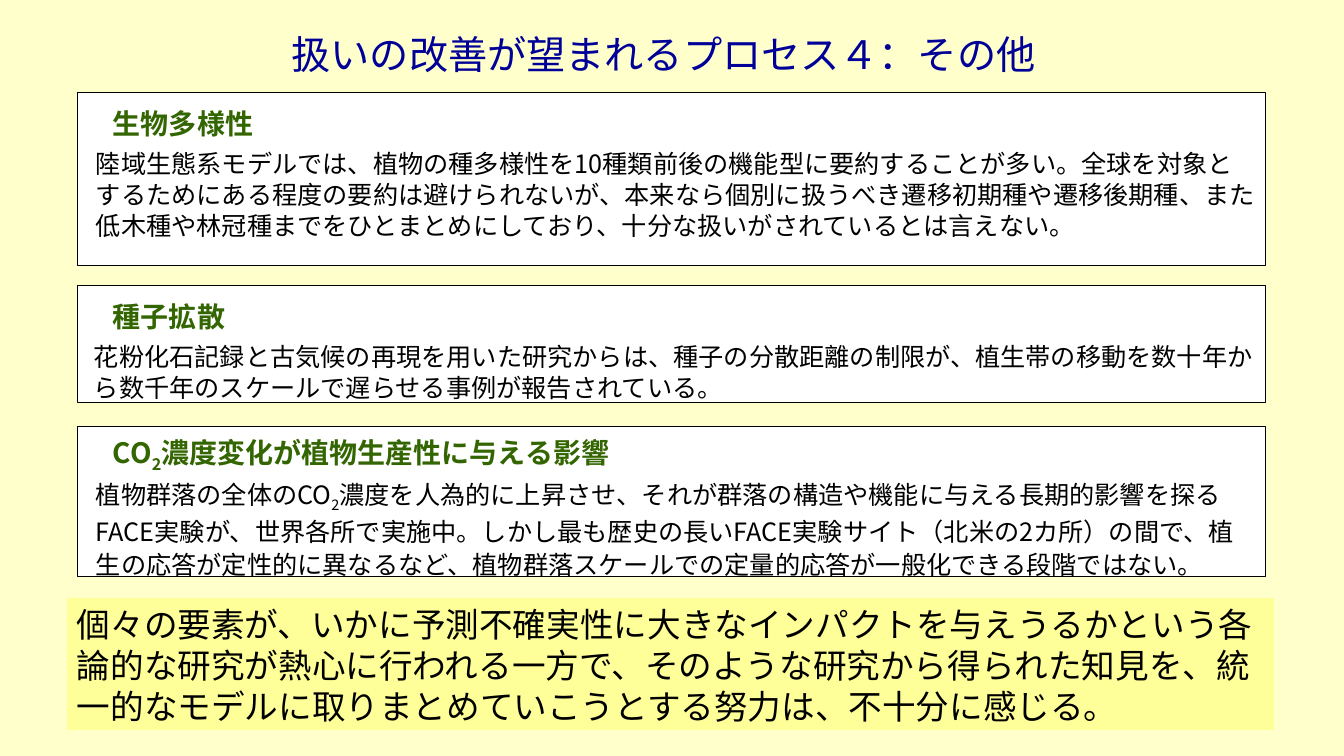
"""Build the slide on processes whose treatment should be improved."""
from dataclasses import dataclass

from lxml.etree import SubElement
from pptx import Presentation
from pptx.dml.color import RGBColor
from pptx.enum.shapes import MSO_SHAPE
from pptx.enum.text import MSO_ANCHOR, PP_ALIGN
from pptx.oxml.ns import qn
from pptx.util import Emu, Pt

TITLE = "扱いの改善が望まれるプロセス４：その他"
SECTIONS = [
    {
        "panel": (93, 173),
        "heading": ["生物多様性"],
        "body": ["陸域生態系モデルでは、植物の種多様性を10種類前後の機能型に要約することが多い。"
                 "全球を対象とするためにある程度の要約は避けられないが、本来なら個別に扱うべき"
                 "遷移初期種や遷移後期種、また低木種や林冠種までをひとまとめにしており、"
                 "十分な扱いがされているとは言えない。"],
        "body_box": (86, 143, 1181, 102),
        "leading": 1.22,
    },
    {
        "panel": (286, 117),
        "heading": ["種子拡散"],
        "body": ["花粉化石記録と古気候の再現を用いた研究からは、種子の分散距離の制限が、"
                 "植生帯の移動を数十年から数千年のスケールで遅らせる事例が報告されている。"],
        "body_box": (84, 336, 1183, 72),
        "leading": 1.22,
    },
    {
        "panel": (427, 150),
        "heading": ["CO", "2", "濃度変化が植物生産性に与える影響"],
        "body": ["植物群落の全体のCO", "2",
                 "濃度を人為的に上昇させ、それが群落の構造や機能に与える長期的影響を探る"
                 "FACE実験が、世界各所で実施中。しかし最も歴史の長いFACE実験サイト"
                 "（北米の2カ所）の間で、植生の応答が定性的に異なるなど、"
                 "植物群落スケールでの定量的応答が一般化できる段階ではない。"],
        "body_box": (86, 476, 1169, 102),
        "leading": 1.3,
    },
]
CONCLUSION = ("個々の要素が、いかに予測不確実性に大きなインパクトを与えうるかという各論的な研究が"
              "熱心に行われる一方で、そのような研究から得られた知見を、統一的なモデルに"
              "取りまとめていこうとする努力は、不十分に感じる。")

SLIDE_SIZE = (1344, 756)
PANEL_LEFT, PANEL_WIDTH = 78, 1188
HEADING_LEFT, HEADING_DROP = 103, 8
HEADING_SIZE = (867, 44)
TITLE_BOX = (210, 14, 907, 79)
CONCLUSION_BOX = (67, 598, 1207, 132)


@dataclass(frozen=True)
class Theme:
    """Colours, font and type sizes of the slide."""
    font: str = "Noto Sans CJK JP"
    background: str = "FFFFCC"
    panel: str = "FFFFFF"
    highlight: str = "FFFF99"
    text: str = "000000"
    title: str = "000099"
    heading: str = "336600"
    title_size: int = 28
    conclusion_size: int = 24
    heading_size: int = 20
    body_size: int = 18


THEME = Theme()


def px(length):
    """Turn pixels into EMU."""
    return Emu(round(length * 914400 / 100.8))


def add_box(slide, box, fill, line=None):
    """Add a plain filled rectangle."""
    shape = slide.shapes.add_shape(MSO_SHAPE.RECTANGLE, *map(px, box))
    shape.shadow.inherit = False
    shape.fill.solid()
    shape.fill.fore_color.rgb = RGBColor.from_string(fill)
    if line:
        shape.line.color.rgb = RGBColor.from_string(line)
        shape.line.width = Pt(0.75)
    else:
        shape.line.fill.background()
    return shape


def add_text(slide, box, runs, *, size, color=THEME.text, bold=False, leading=1.22,
             align=PP_ALIGN.LEFT, anchor=MSO_ANCHOR.TOP):
    """Add one paragraph whose every second run is a subscript."""
    frame = slide.shapes.add_textbox(*map(px, box)).text_frame
    frame.word_wrap = True
    frame.vertical_anchor = anchor
    paragraph = frame.paragraphs[0]
    paragraph.alignment = align
    paragraph.line_spacing = Pt(round(size * leading, 1))
    for index, text in enumerate(runs):
        run = paragraph.add_run()
        run.text = text
        run.font.name = THEME.font
        run.font.size = Pt(size)
        run.font.bold = bold
        run.font.color.rgb = RGBColor.from_string(color)
        properties = run.font._element
        SubElement(properties, qn("a:ea")).set("typeface", THEME.font)
        if index % 2:
            properties.set("baseline", "-25000")


def add_section(slide, section):
    """Add a panel with its heading and body text."""
    top, height = section["panel"]
    add_box(slide, (PANEL_LEFT, top, PANEL_WIDTH, height), THEME.panel, THEME.text)
    add_text(slide, (HEADING_LEFT, top + HEADING_DROP, *HEADING_SIZE), section["heading"],
             size=THEME.heading_size, color=THEME.heading, bold=True)
    add_text(slide, section["body_box"], section["body"],
             size=THEME.body_size, leading=section["leading"])


def main():
    """Build and save the presentation."""
    presentation = Presentation()
    presentation.slide_width, presentation.slide_height = map(px, SLIDE_SIZE)
    slide = presentation.slides.add_slide(presentation.slide_layouts[6])
    slide.background.fill.solid()
    slide.background.fill.fore_color.rgb = RGBColor.from_string(THEME.background)

    add_text(slide, TITLE_BOX, [TITLE], size=THEME.title_size, color=THEME.title,
             align=PP_ALIGN.CENTER, anchor=MSO_ANCHOR.MIDDLE)
    for section in SECTIONS:
        add_section(slide, section)
    add_box(slide, CONCLUSION_BOX, THEME.highlight)
    add_text(slide, CONCLUSION_BOX, [CONCLUSION], size=THEME.conclusion_size)
    presentation.save("out.pptx")


if __name__ == "__main__":
    main()
